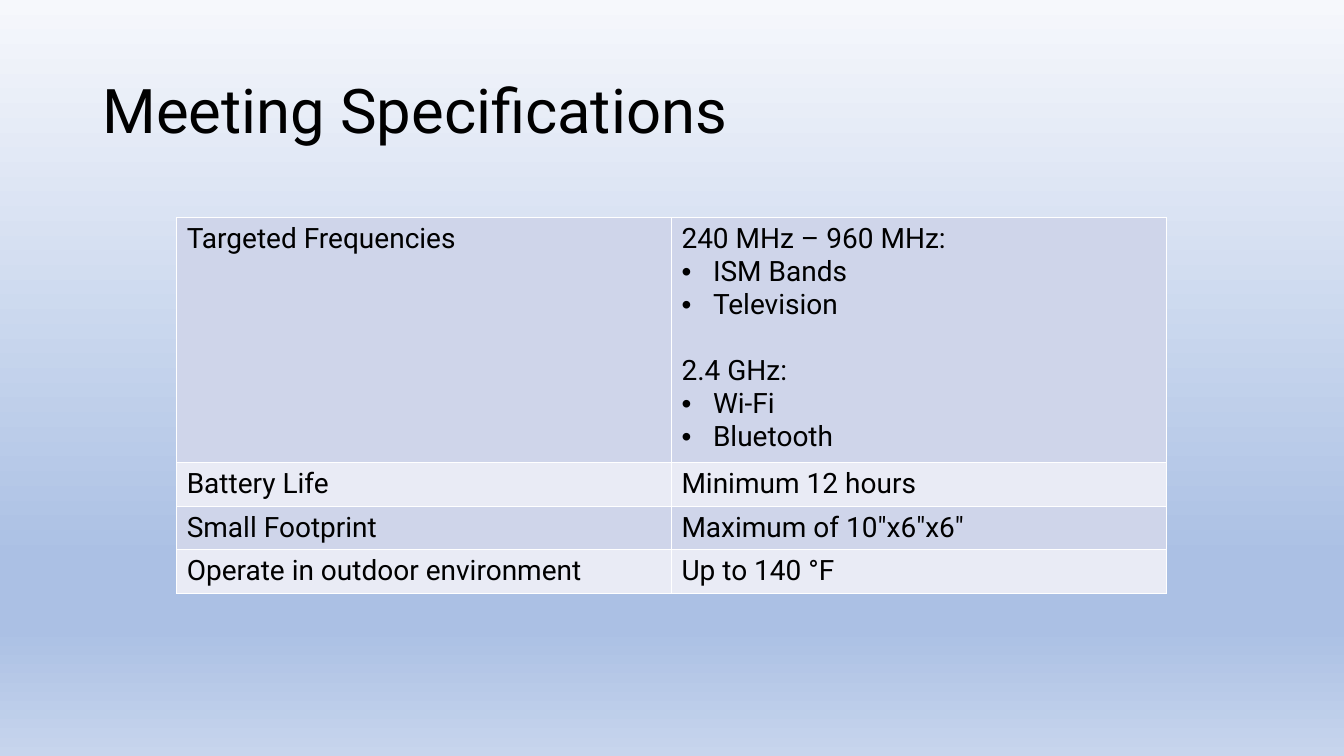
import lxml.etree
import pptx
import pptx.dml.color
import pptx.enum.text
import pptx.oxml.ns
import pptx.util

Pt = pptx.util.Pt
RGBColor = pptx.dml.color.RGBColor
qn = pptx.oxml.ns.qn

FONT = "Roboto"
BLACK = RGBColor(0x00, 0x00, 0x00)
WHITE = RGBColor(0xFF, 0xFF, 0xFF)
BANDS = [RGBColor(0xCF, 0xD5, 0xEA), RGBColor(0xE9, 0xEB, 0xF5)]
SKY_PALE = RGBColor(0xF6, 0xF8, 0xFC)
SKY_DEEP = RGBColor(0xAB, 0xC0, 0xE4)
SKY_SOFT = RGBColor(0xC7, 0xD5, 0xED)
SKY_STOPS = [(0, SKY_PALE), (74, SKY_DEEP), (83, SKY_DEEP), (100, SKY_SOFT)]

BODY_SIZE = 20
LINE_HEIGHT = 23.4
BULLET_INDENT = Pt(22.5)
COLUMN_WIDTH = Pt(353.4)
ROW_HEIGHTS = [Pt(171.2), Pt(30.7), Pt(30.7), Pt(30.7)]

FREQUENCY_BANDS = [
    ("240 MHz – 960 MHz:", ["ISM Bands", "Television"]),
    ("2.4 GHz:", ["Wi-Fi", "Bluetooth"]),
]
SPECIFICATIONS = [
    ("Targeted Frequencies", FREQUENCY_BANDS),
    ("Battery Life", [("Minimum 12 hours", [])]),
    ("Small Footprint", [('Maximum of 10"x6"x6"', [])]),
    ("Operate in outdoor environment", [("Up to 140 °F", [])]),
]


def add_color(parent, color):
    fill = lxml.etree.SubElement(parent, qn("a:solidFill"))
    lxml.etree.SubElement(fill, qn("a:srgbClr"), val=str(color))


def paint_background(slide):
    fill = slide.background.fill
    fill.gradient()
    fill.gradient_angle = 270
    stops = slide.element.find(".//" + qn("a:gsLst"))
    for stop in list(stops):
        stops.remove(stop)
    for percent, color in SKY_STOPS:
        stop = lxml.etree.SubElement(stops, qn("a:gs"), pos=str(percent * 1000))
        lxml.etree.SubElement(stop, qn("a:srgbClr"), val=str(color))


def write(paragraph, text, size):
    paragraph.text = text
    for run in paragraph.runs:
        run.font.name = FONT
        run.font.size = Pt(size)
        run.font.color.rgb = BLACK


def add_bullet(paragraph):
    properties = paragraph._p.get_or_add_pPr()
    properties.set("marL", str(BULLET_INDENT))
    properties.set("indent", str(-BULLET_INDENT))
    lxml.etree.SubElement(properties, qn("a:buFont"), typeface="Arial")
    lxml.etree.SubElement(properties, qn("a:buChar"), char="•")


def add_title(slide, text):
    title = slide.shapes.add_textbox(Pt(66), Pt(28.8), Pt(828), Pt(104.4))
    frame = title.text_frame
    frame.word_wrap = True
    frame.vertical_anchor = pptx.enum.text.MSO_ANCHOR.MIDDLE
    write(frame.paragraphs[0], text, 44)
    frame.paragraphs[0].line_spacing = 0.9


def style_cell(cell, color):
    properties = cell._tc.get_or_add_tcPr()
    for side in ("lnL", "lnR", "lnT", "lnB"):
        border = lxml.etree.SubElement(properties, qn("a:" + side), w=str(Pt(1)))
        add_color(border, WHITE)
    cell.fill.solid()
    cell.fill.fore_color.rgb = color


def write_groups(cell, groups):
    """Fill a cell with headings, each followed by its bulleted items."""
    frame = cell.text_frame
    for index, (heading, items) in enumerate(groups):
        paragraph = frame.add_paragraph() if index else frame.paragraphs[0]
        write(paragraph, heading, BODY_SIZE)
        if index:
            paragraph.space_before = Pt(LINE_HEIGHT)
        for item in items:
            bullet = frame.add_paragraph()
            write(bullet, item, BODY_SIZE)
            add_bullet(bullet)


def add_specifications(slide):
    table = slide.shapes.add_table(
        len(SPECIFICATIONS), 2, Pt(126.2), Pt(155.6),
        2 * COLUMN_WIDTH, sum(ROW_HEIGHTS),
    ).table
    table.first_row = False
    table.horz_banding = False
    for column in table.columns:
        column.width = COLUMN_WIDTH
    for index, (requirement, groups) in enumerate(SPECIFICATIONS):
        row = table.rows[index]
        row.height = ROW_HEIGHTS[index]
        for cell, content in zip(row.cells, ([(requirement, [])], groups)):
            style_cell(cell, BANDS[index % 2])
            write_groups(cell, content)


def main():
    presentation = pptx.Presentation()
    presentation.slide_width = Pt(960)
    presentation.slide_height = Pt(540)
    slide = presentation.slides.add_slide(presentation.slide_layouts[6])
    paint_background(slide)
    add_title(slide, "Meeting Specifications")
    add_specifications(slide)
    presentation.save("out.pptx")


if __name__ == "__main__":
    main()
